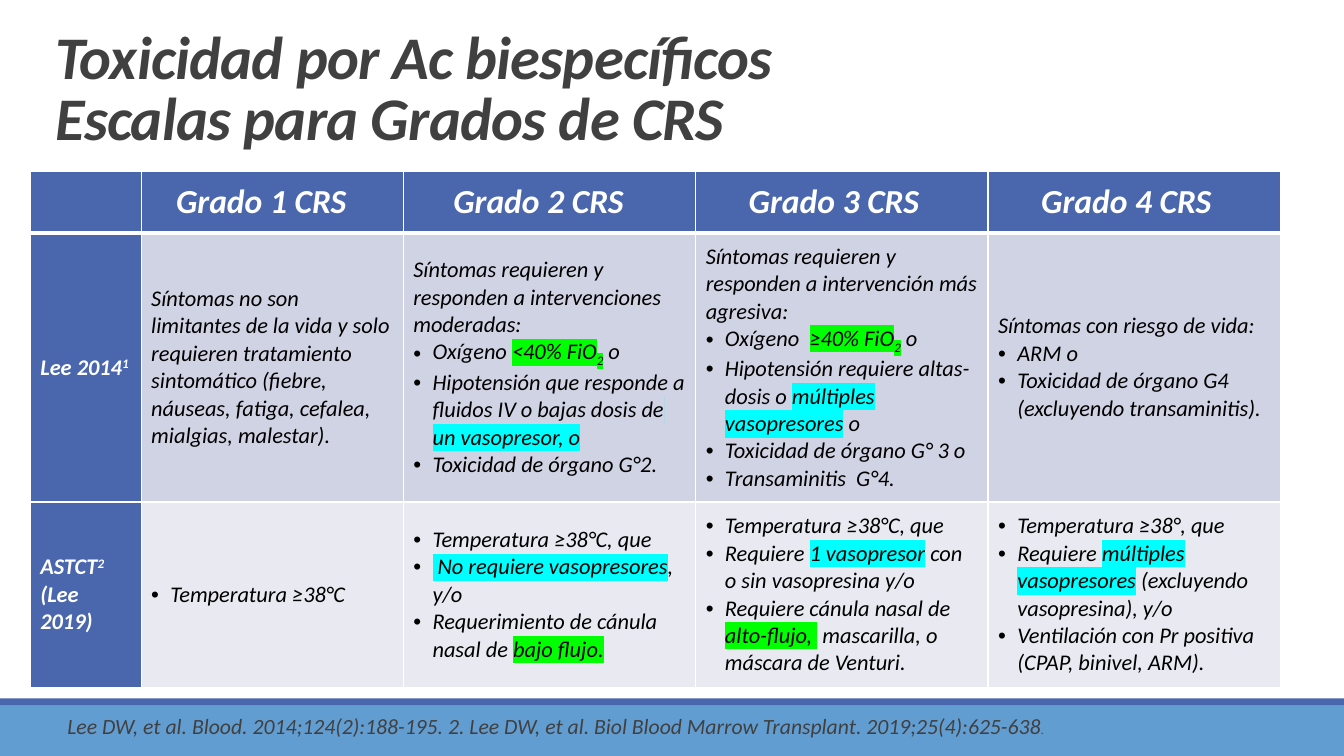
from pptx import Presentation
from pptx.dml.color import RGBColor
from pptx.enum.shapes import MSO_SHAPE
from pptx.enum.text import MSO_ANCHOR, PP_ALIGN
from pptx.oxml.ns import qn
from pptx.util import Inches, Pt
from lxml import etree

RECT = MSO_SHAPE.RECTANGLE
TOP, MIDDLE, BOTTOM = MSO_ANCHOR.TOP, MSO_ANCHOR.MIDDLE, MSO_ANCHOR.BOTTOM
LEFT, CENTER = PP_ALIGN.LEFT, PP_ALIGN.CENTER

SLIDE_W, SLIDE_H = 13.33, 7.5
THEME = {
    "font": "Calibri",
    "ink": "404040", "black": "000000", "white": "FFFFFF",
    "navy": "4A66AC", "sky": "629DD1",
    "rows": ["D0D3E3", "E9EAF1"],
    "green": "00FF00", "cyan": "00FFFF",
    "title": 43.2, "header": 24, "body": 16, "cite": 15.5, "dot": 8.1,
}

# Table grid, in inches
COLS = [1.1, 2.6, 2.9, 2.9, 2.9]
ROWS = [0.61, 2.67, 1.84]
PAD, INDENT = 0.1, 0.19
HEADER_SHIFT = [0, 0.22, 0.22, 0.16, 0.16]


def green(text, base=None):
    return text, {"hl": THEME["green"], "base": base}


def cyan(text):
    return text, {"hl": THEME["cyan"]}


def sup(text):
    return text, {"base": 30}


def fio2(text):
    return [green(text), green("2", -25), " o"]


HEADERS = ["", "Grado 1 CRS", "Grado 2 CRS", "Grado 3 CRS", "Grado 4 CRS"]
# Each scale: its label, then (opening paragraph, bullets) for each grade
SCALES = [
    (["Lee 2014", sup("1")], [
        ("Síntomas no son limitantes de la vida y solo requieren tratamiento "
         "sintomático (fiebre, náuseas, fatiga, cefalea, mialgias, malestar).", []),
        ("Síntomas requieren y responden a intervenciones moderadas:", [
            ["Oxígeno ", *fio2("<40% FiO")],
            ["Hipotensión que responde a fluidos IV o bajas dosis de",
             cyan(" un vasopresor, o")],
            ["Toxicidad de órgano G°2."]]),
        ("Síntomas requieren y responden a intervención más agresiva:", [
            ["Oxígeno  ", *fio2("≥40% FiO")],
            ["Hipotensión requiere altas-dosis o ",
             cyan("múltiples vasopresores"), " o"],
            ["Toxicidad de órgano G° 3 o"],
            ["Transaminitis  G°4."]]),
        ("Síntomas con riesgo de vida:", [
            ["ARM o"],
            ["Toxicidad de órgano G4 (excluyendo transaminitis)."]]),
    ]),
    (["ASTCT", sup("2"), " (Lee 2019)"], [
        ("", [["Temperatura ≥38°C"]]),
        ("", [
            ["Temperatura ≥38°C, que"],
            [cyan(" No requiere vasopresores"), ", y/o"],
            ["Requerimiento de cánula nasal de ", green("bajo flujo.")]]),
        ("", [
            ["Temperatura ≥38°C, que"],
            ["Requiere ", cyan("1 vasopresor"), " con o sin vasopresina y/o"],
            ["Requiere cánula nasal de ", green("alto-flujo, "),
             " mascarilla, o máscara de Venturi."]]),
        ("", [
            ["Temperatura ≥38°, que"],
            ["Requiere ", cyan("múltiples vasopresores"),
             " (excluyendo vasopresina), y/o"],
            ["Ventilación con Pr positiva (CPAP, binivel, ARM)."]]),
    ]),
]


def rgb(color):
    return RGBColor.from_string(color)


def sub(parent, tag, **attrs):
    return etree.SubElement(parent, qn(tag), attrs)


def add_run(p, text, size, color, bold=False, italic=True,
            hl=None, base=None, spacing=None):
    r = p.add_run()
    r.text = text
    r.font.color.rgb = rgb(color)
    rPr = r.font._element
    if hl:
        sub(sub(rPr, "a:highlight"), "a:srgbClr", val=hl)
    if base:
        rPr.set("baseline", str(base * 1000))
    if spacing:
        rPr.set("spc", str(int(spacing * 100)))
    fmt = {"name": THEME["font"], "size": Pt(size), "bold": bold, "italic": italic}
    for key, value in fmt.items():
        setattr(r.font, key, value)


def add_bullet(p):
    pPr = p._p.get_or_add_pPr()
    pPr.set("marL", str(Inches(INDENT)))
    pPr.set("indent", str(-Inches(INDENT)))
    sub(pPr, "a:buFont", typeface="Arial")
    sub(pPr, "a:buChar", char="•")


def add_band(s, box, color):
    sp = s.shapes.add_shape(RECT, *map(Inches, box))
    sp.shadow.inherit = False
    sp.fill.solid()
    sp.fill.fore_color.rgb = rgb(color)
    sp.line.fill.background()


def add_text(s, box, anchor, line_spacing):
    tf = s.shapes.add_textbox(*map(Inches, box)).text_frame
    tf.word_wrap = True
    tf.vertical_anchor = anchor
    p = tf.paragraphs[0]
    p.line_spacing = line_spacing
    return p


def title(s, box):
    p = add_text(s, box, BOTTOM, 0.85)
    for i, line in enumerate(["Toxicidad por Ac biespecíficos",
                              "Escalas para Grados de CRS"]):
        if i:
            p.add_line_break()
        add_run(p, line, THEME["title"], THEME["ink"], bold=True, spacing=-0.5)


def style_cell(cell, fill, bottom=1, shift=0):
    fmt = {"vertical_anchor": MIDDLE, "margin_left": Inches(PAD),
           "margin_right": Inches(PAD + shift),
           "margin_top": Inches(PAD), "margin_bottom": Inches(PAD)}
    for key, value in fmt.items():
        setattr(cell, key, value)
    tcPr = cell._tc.get_or_add_tcPr()
    for side, width in zip("LRTB", (1, 1, 1, bottom)):
        ln = sub(tcPr, "a:ln" + side, w=str(Pt(width)))
        sub(sub(ln, "a:solidFill"), "a:srgbClr", val=THEME["white"])
    cell.fill.solid()
    cell.fill.fore_color.rgb = rgb(fill)


def fill_cell(cell, paragraphs, size, color, bold=False, align=LEFT):
    """Write (is_bullet, runs) pairs, one paragraph each."""
    tf = cell.text_frame
    for i, (is_bullet, runs) in enumerate(paragraphs):
        p = tf.add_paragraph() if i else tf.paragraphs[0]
        if is_bullet:
            add_bullet(p)
        p.alignment = align
        for run in runs:
            text, extra = (run, {}) if isinstance(run, str) else run
            add_run(p, text, size, color, bold, **extra)


def grades_table(s, left, top):
    box = left, top, sum(COLS), sum(ROWS)
    table = s.shapes.add_table(len(ROWS), len(COLS), *map(Inches, box)).table
    table.first_row = table.horz_banding = False
    for col, width in zip(table.columns, COLS):
        col.width = Inches(width)
    for row, height in zip(table.rows, ROWS):
        row.height = Inches(height)
    # Header row
    for c, text in enumerate(HEADERS):
        cell = table.cell(0, c)
        style_cell(cell, THEME["navy"], 3, HEADER_SHIFT[c])
        if text:
            fill_cell(cell, [(False, [text])], THEME["header"],
                      THEME["white"], True, CENTER)
    # One row per scale
    for r, (label, grades) in enumerate(SCALES, 1):
        cell = table.cell(r, 0)
        style_cell(cell, THEME["navy"])
        fill_cell(cell, [(False, label)], THEME["body"], THEME["white"], True)
        for c, (opening, bullets) in enumerate(grades, 1):
            cell = table.cell(r, c)
            style_cell(cell, THEME["rows"][r - 1])
            paragraphs = [(False, [opening])] if opening else []
            paragraphs += [(True, runs) for runs in bullets]
            fill_cell(cell, paragraphs, THEME["body"], THEME["black"])


def footer(s, top, height):
    stripe = 0.07
    add_band(s, (0, top + stripe, SLIDE_W, height - stripe), THEME["sky"])
    add_band(s, (0, top, SLIDE_W, stripe), THEME["navy"])
    p = add_text(s, (0.57, top + 0.16, SLIDE_W - 0.57, 0.3), TOP, 0.7)
    add_run(p, "Lee DW, et al. Blood. 2014;124(2):188-195. 2. Lee DW, et al. "
            "Biol Blood Marrow Transplant. 2019;25(4):625-638",
            THEME["cite"], THEME["ink"])
    add_run(p, ".", THEME["dot"], THEME["ink"], italic=False)


def main():
    prs = Presentation()
    prs.slide_width, prs.slide_height = Inches(SLIDE_W), Inches(SLIDE_H)
    s = prs.slides.add_slide(prs.slide_layouts[6])
    footer(s, 6.93, 0.57)
    title(s, (0.45, 0.27, 11, 1.3))
    grades_table(s, 0.3, 1.7)
    prs.save("out.pptx")


if __name__ == "__main__":
    main()
